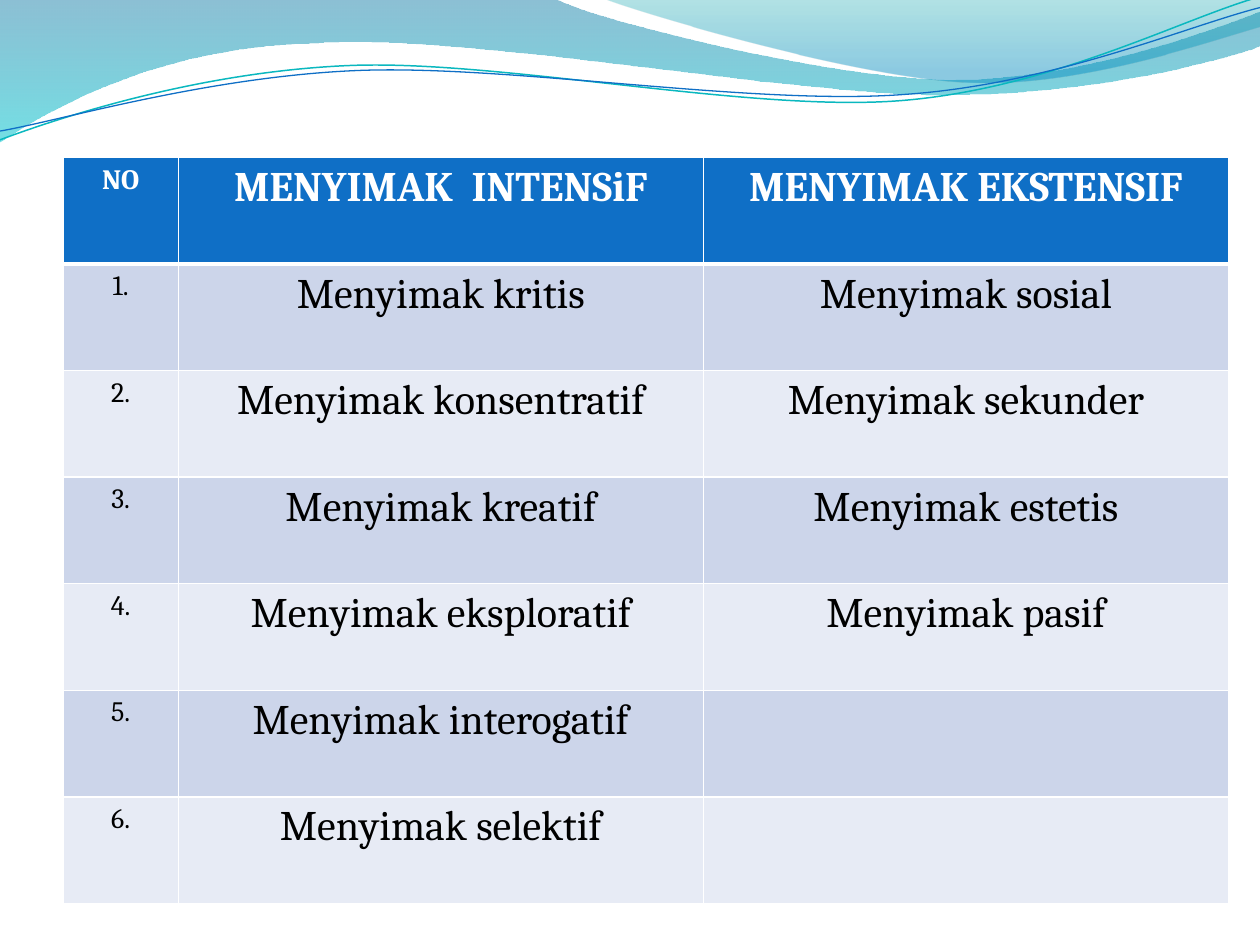
from math import cos, radians, sin

from lxml import etree
from pptx import Presentation
from pptx.dml.color import RGBColor
from pptx.enum.text import PP_ALIGN
from pptx.oxml.ns import qn
from pptx.util import Inches, Pt

CENTER = PP_ALIGN.CENTER

# Content
HEAD = ("NO", "MENYIMAK  INTENSiF", "MENYIMAK EKSTENSIF")
LEFT = ("kritis", "konsentratif", "kreatif", "eksploratif", "interogatif", "selektif")
RIGHT = ("sosial", "sekunder", "estetis", "pasif", "", "")
BLUE, WHITE, BANDS = "0F6FC6", "FFFFFF", ("CCD5EA", "E7EBF5")

# Waves: a pair is a line end, six numbers are a Bezier curve
BACK = [(0, 0), (4.4, -0.01), (4.76, 0.17, 6.64, 0.63, 7.58, 0.63),
        (8.53, 0.63, 9.58, 0.26, 10, 0.09), (10.01, 0.36),
        (9.83, 0.44, 8.7, 0.76, 7.46, 0.75), (6.22, 0.75, 3.82, 0.28, 2.57, 0.34),
        (1.29, 0.36, 0.46, 0.83, -0.01, 1.13), (0, 0)]
FRONT = [(4.79, -0.01), (5.09, 0.11, 6.82, 0.62, 7.69, 0.65),
         (8.56, 0.69, 9.61, 0.32, 10, 0.21), (10, 0), (4.79, -0.01)]
TEAL = [(0, 1.11), (0.48, 0.93, 1.58, 0.57, 2.77, 0.52),
        (3.95, 0.47, 5.93, 0.89, 7.13, 0.8), (8.33, 0.71, 9.38, 0.15, 9.98, -0.02)]
NAVY = [(0, 1.04), (0.47, 0.96, 1.64, 0.61, 2.83, 0.56),
        (4.03, 0.51, 5.97, 0.84, 7.17, 0.75), (8.36, 0.67, 9.41, 0.21, 10, 0.06)]
FILLS = [  # outline, then (position, colour, opacity) stops
    (BACK, [(0, "0074A1", 45), (1, "00C6CF", 55)]),
    (FRONT, [(0, "00A1A9", 30), (0.8, "008BBF", 45)]),
]
LINES = [  # outline, colour, width, centre
    (TEAL, "0AB8BF", 0.85, (4.99, 0.575)),
    (NAVY, BLUE, 0.75, (4.995, 0.59)),
]
TILT = -2.7


def color(code):
    return RGBColor.from_string(code)


def level(segs, mid):
    """Turn the points back by the tilt, so the shape can carry it."""
    a = radians(-TILT)
    out = []
    for seg in segs:
        flat = []
        for x, y in zip(seg[::2], seg[1::2]):
            dx, dy = x - mid[0], y - mid[1]
            flat += [mid[0] + dx * cos(a) - dy * sin(a),
                     mid[1] + dx * sin(a) + dy * cos(a)]
        out.append(flat)
    return out


def wave(shapes, segs, close):
    pts = [(Inches(x), Inches(y)) for s in segs for x, y in zip(s[::2], s[1::2])]
    pen = shapes.build_freeform(*pts[0])
    pen.add_line_segments(pts[1:], close=close)
    shape = pen.convert_to_shape()
    shape.shadow.inherit = False
    # Join each three points of a curve into one Bezier
    steps = shape.element.spPr.iter(qn("a:lnTo"))
    steps = iter(list(steps))
    for seg in segs[1:]:
        first = next(steps)
        if len(seg) == 6:
            first.tag
            curve = etree.Element(qn("a:cubicBezTo"))
            first.addprevious(curve)
            for step in (first, next(steps), next(steps)):
                curve.append(step[0])
                step.getparent().remove(step)
    return shape


def shade(shape, stops):
    shape.line.fill.background()
    shape.fill.gradient()
    shape.fill.gradient_angle = 270  # top to bottom
    for stop, (pos, code, _) in zip(shape.fill.gradient_stops, stops):
        stop.position = pos
        stop.color.rgb = color(code)
    for node, (_, _, alpha) in zip(shape.element.spPr.iter(qn("a:srgbClr")), stops):
        etree.SubElement(node, qn("a:alpha")).set("val", str(alpha * 1000))


def edge(cell, side, width):
    """Put a white border on one side of a cell."""
    props = cell._tc.get_or_add_tcPr()
    line = etree.Element(qn(f"a:ln{side}"), w=str(Pt(width)))
    fill = etree.SubElement(line, qn("a:solidFill"))
    etree.SubElement(fill, qn("a:srgbClr"), val=WHITE)
    props.find(qn("a:solidFill")).addprevious(line)


def write(cell, text, size=24, ink="000000", bold=False, fill=WHITE):
    cell.fill.solid()
    cell.fill.fore_color.rgb = color(fill)
    para = cell.text_frame.paragraphs[0]
    para.alignment = CENTER
    if text:
        run = para.add_run()
        run.text = text
        font = run.font
        font.name, font.size, font.bold = "Cambria", Pt(size), bold
        font.color.rgb = color(ink)


def main():
    prs = Presentation()
    prs.slide_width, prs.slide_height = Inches(10), Inches(7.5)
    slide = prs.slides.add_slide(prs.slide_layouts[6])

    # Waves along the top
    for segs, stops in FILLS:
        shade(wave(slide.shapes, segs, True), stops)
    group = slide.shapes.add_group_shape()
    for segs, code, width, mid in LINES:
        shape = wave(group.shapes, level(segs, mid), False)
        shape.rotation = TILT
        shape.fill.background()
        shape.line.color.rgb = color(code)
        shape.line.width = Pt(width)

    # Table of listening types
    rows = [HEAD]
    for n, pair in enumerate(zip(LEFT, RIGHT), 1):
        rows.append((f"{n}.", *(f"Menyimak {kind}" if kind else "" for kind in pair)))
    table = slide.shapes.add_table(len(rows), len(HEAD), Inches(0.5), Inches(1.25),
                                   Inches(9.25), Inches(5.92)).table
    for col, width in zip(table.columns, (0.915, 4.1675, 4.1675)):
        col.width = Inches(width)
    for r, row in enumerate(rows):
        if r:
            look = {"fill": BANDS[(r - 1) % 2]}
        else:
            look = {"fill": BLUE, "ink": WHITE, "bold": True}
        for c, text in enumerate(row):
            cell = table.cell(r, c)
            write(cell, text, size=24 if c else 16, **look)
            if not r:
                for side, width in zip("LRTB", (1, 1, 1, 3)):
                    edge(cell, side, width)

    prs.save("out.pptx")


if __name__ == "__main__":
    main()
